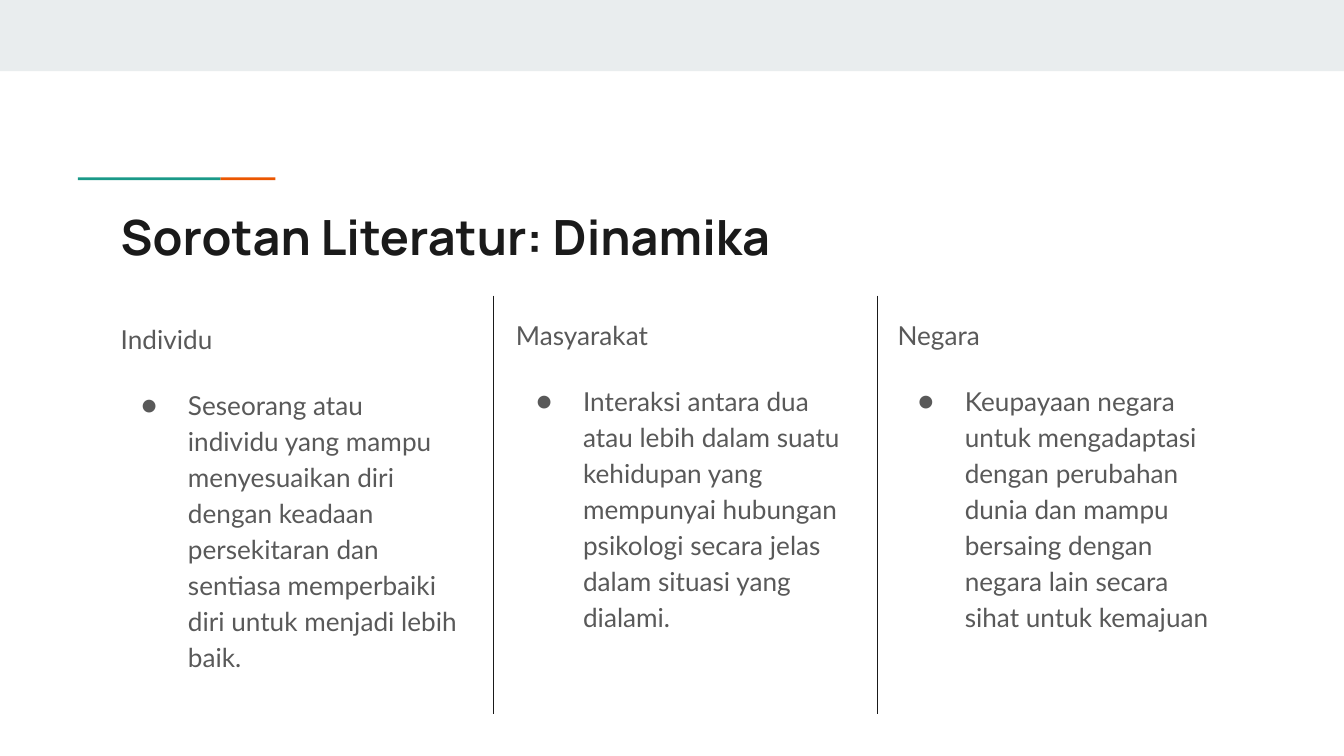
from lxml.etree import SubElement
from pptx import Presentation
from pptx.dml.color import RGBColor
from pptx.enum.shapes import MSO_CONNECTOR as LINE, MSO_SHAPE as SHAPE
from pptx.oxml.ns import qn
from pptx.util import Inches, Pt

HUES = {"band": "E9EDEE", "teal": "1A9988", "orange": "EB5600",
        "dark": "1A1A1A", "gray": "595959"}

COLS = [
    (0.8, 2.27, 2.72, 2.85, "Individu",
     "Seseorang atau individu yang mampu menyesuaikan diri dengan keadaan "
     "persekitaran dan sentiasa memperbaiki diri untuk menjadi lebih baik."),
    (3.74, 2.24, 2.62, 2.93, "Masyarakat",
     "Interaksi antara dua atau lebih dalam suatu kehidupan yang mempunyai "
     "hubungan psikologi secara jelas dalam situasi yang dialami."),
    (6.58, 2.24, 2.62, 2.85, "Negara",
     "Keupayaan negara untuk mengadaptasi dengan perubahan dunia dan mampu "
     "bersaing dengan negara lain secara sihat untuk kemajuan"),
]


class Deck:
    """Holds the text style and the current slide, 16 to 9."""
    head = ("Manrope", 26, "dark", True)
    body = ("Lato", 14, "gray", False)

    def __init__(self, wide):
        self.prs = Presentation()
        self.prs.slide_width = Inches(wide)
        self.prs.slide_height = Inches(wide * 9 / 16)
        self.slide = self.prs.slides.add_slide(self.prs.slide_layouts[6])

    def hue(self, name):
        return RGBColor.from_string(HUES[name])

    def rect(self, x, y, w, h, hue):
        box = self.slide.shapes.add_shape(
            SHAPE.RECTANGLE, Inches(x), Inches(y), Inches(w), Inches(h))
        box.shadow.inherit = False
        box.fill.solid()
        box.fill.fore_color.rgb = self.hue(hue)
        box.line.fill.background()

    def rule(self, x, top, end):
        """Draws an upright divider."""
        line = self.slide.shapes.add_connector(
            LINE.STRAIGHT, Inches(x), Inches(top), Inches(x), Inches(end))
        line.line.color.rgb = self.hue("dark")
        line.line.width = Pt(0.75)
        SubElement(line._element.spPr, qn("a:effectLst"))

    def text(self, x, y, w, h, words, style):
        font, size, hue, bold = style
        box = self.slide.shapes.add_textbox(
            Inches(x), Inches(y), Inches(w), Inches(h))
        frame = box.text_frame
        frame.word_wrap = True
        frame.margin_left = frame.margin_right = Inches(0.1)
        frame.margin_top = frame.margin_bottom = Inches(0.1)
        frame.text = words
        for para in frame.paragraphs:
            for run in para.runs:
                run.font.name = font
                run.font.size = Pt(size)
                run.font.bold = bold
                run.font.color.rgb = self.hue(hue)
        return frame

    def bullet(self, para):
        para.space_before = Pt(16)
        props = para._p.get_or_add_pPr()
        props.set("marL", str(Inches(0.5)))
        props.set("indent", str(Pt(-25)))
        tint = SubElement(props, qn("a:buClr"))
        SubElement(tint, qn("a:srgbClr"), val=HUES["gray"])
        SubElement(props, qn("a:buSzPts"), val="1400")
        SubElement(props, qn("a:buFont"), typeface="Lato")
        SubElement(props, qn("a:buChar"), char="●")

    def column(self, x, y, w, h, name, note):
        frame = self.text(x, y, w, h, f"{name}\n{note}", self.body)
        for para in frame.paragraphs:
            para.line_spacing = 1.15
        self.bullet(frame.paragraphs[1])


def main():
    deck = Deck(10)
    deck.rect(0, 0, 10, 0.53, "band")
    deck.rect(1.64, 1.32, 0.41, 0.02, "orange")
    deck.rect(0.58, 1.32, 1.06, 0.02, "teal")
    deck.text(0.8, 1.44, 8.41, 0.59, "Sorotan Literatur: Dinamika", deck.head)
    for col in COLS:
        deck.column(*col)
    for x in (3.67, 6.53):
        deck.rule(x, 2.2, 5.31)
    deck.prs.save("out.pptx")


if __name__ == "__main__":
    main()
